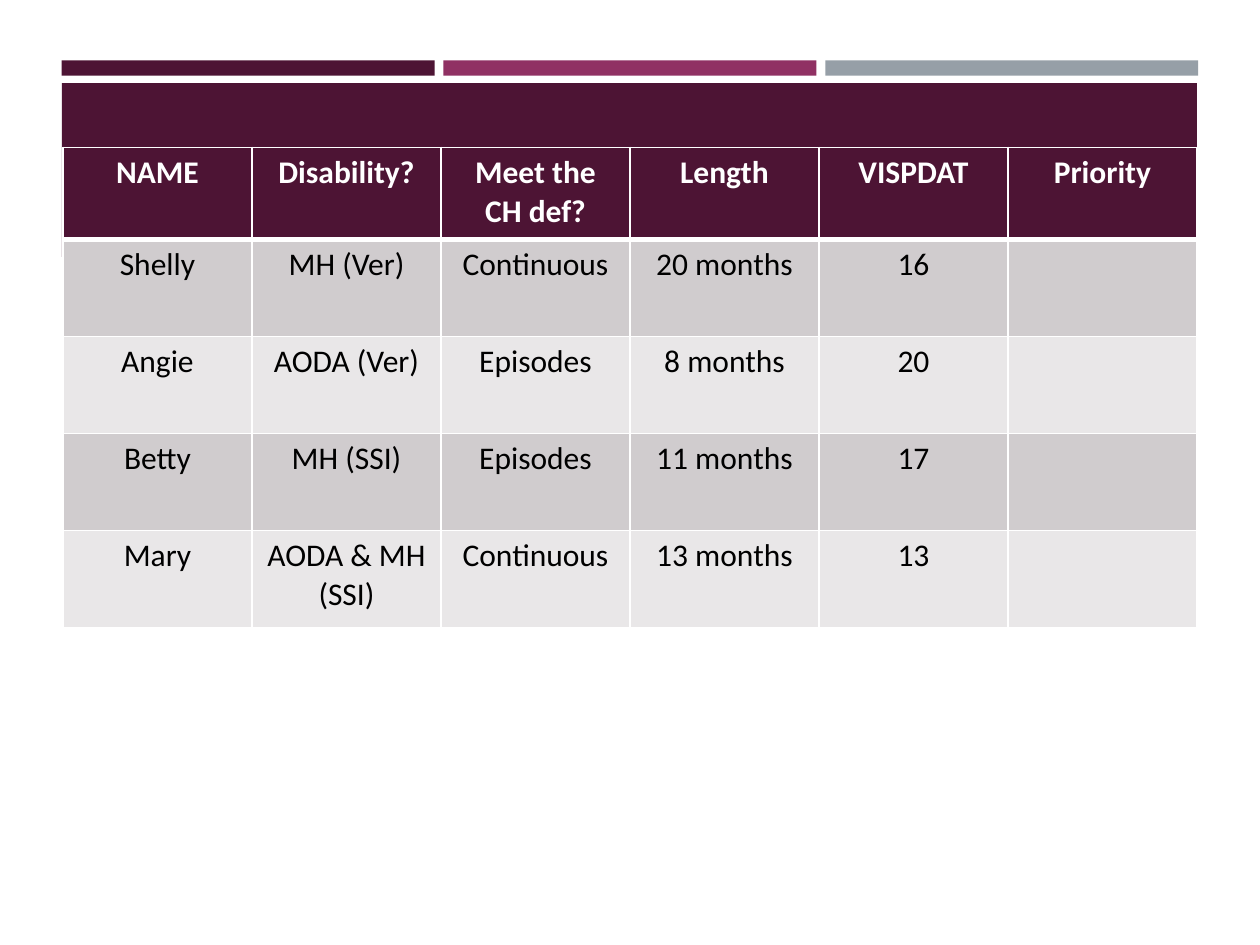
"""Build a slide with a priority table of clients under a banded header."""
from dataclasses import dataclass

from lxml import etree
from pptx import Presentation
from pptx.dml.color import RGBColor
from pptx.enum.shapes import MSO_SHAPE
from pptx.enum.text import PP_ALIGN
from pptx.oxml.ns import qn
from pptx.util import Inches, Pt

RECT = MSO_SHAPE.RECTANGLE
CENTER = PP_ALIGN.CENTER
BLANK_LAYOUT = 6
FONT = "Calibri"
PLUM, MAGENTA, GREY = "4D1434", "903163", "969FA7"
WHITE, BLACK = "FFFFFF", "000000"
ROW_FILLS = ("D0CCCE", "E9E7E8")
HEADER_HEIGHT, ROW_HEIGHT = 0.73, 0.77

ROWS = (
    ("NAME", "Disability?", "Meet the CH def?", "Length", "VISPDAT", "Priority"),
    ("Shelly", "MH (Ver)", "Continuous", "20 months", "16", ""),
    ("Angie", "AODA (Ver)", "Episodes", "8 months", "20", ""),
    ("Betty", "MH (SSI)", "Episodes", "11 months", "17", ""),
    ("Mary", "AODA & MH (SSI)", "Continuous", "13 months", "13", ""),
)


@dataclass(frozen=True)
class Bar:
    left: float
    top: float
    width: float
    height: float
    color: str


@dataclass(frozen=True)
class CellStyle:
    fill: str
    color: str
    bold: bool
    top_line: int
    bottom_line: int


BARS = [Bar(0.49 + i * 3.03, 0.48, 2.96, 0.12, color)
        for i, color in enumerate((PLUM, MAGENTA, GREY))]
BARS.append(Bar(0.49, 0.66, 9.01, 1.38, PLUM))


def rgb(color: str) -> RGBColor:
    return RGBColor.from_string(color)


def draw_bar(slide, bar: Bar) -> None:
    sp = slide.shapes.add_shape(RECT, Inches(bar.left), Inches(bar.top),
                                Inches(bar.width), Inches(bar.height))
    sp.shadow.inherit = False
    sp.fill.solid()
    sp.fill.fore_color.rgb = rgb(bar.color)
    sp.line.fill.background()


def row_style(row: int) -> CellStyle:
    if row == 0:
        return CellStyle(PLUM, WHITE, True, 1, 3)
    return CellStyle(ROW_FILLS[(row - 1) % 2], BLACK, False, 3 if row == 1 else 1, 1)


def add_border(cell, side: str, points: int) -> None:
    tc_pr = cell._tc.get_or_add_tcPr()
    ln = etree.SubElement(tc_pr, qn(f"a:ln{side}"), w=str(Pt(points)))
    fill = etree.SubElement(ln, qn("a:solidFill"))
    etree.SubElement(fill, qn("a:srgbClr"), val=WHITE)


def format_cell(cell, text: str, style: CellStyle) -> None:
    for side, points in (("L", 1), ("R", 1), ("T", style.top_line), ("B", style.bottom_line)):
        add_border(cell, side, points)
    cell.fill.solid()
    cell.fill.fore_color.rgb = rgb(style.fill)
    cell.text_frame.text = text
    p = cell.text_frame.paragraphs[0]
    p.alignment = CENTER
    for r in p.runs:
        r.font.name = FONT
        r.font.size = Pt(18)
        r.font.bold = style.bold
        r.font.color.rgb = rgb(style.color)


def draw_table(slide) -> None:
    height = HEADER_HEIGHT + ROW_HEIGHT * (len(ROWS) - 1)
    table = slide.shapes.add_table(len(ROWS), len(ROWS[0]), Inches(0.5), Inches(1.17),
                                   Inches(9), Inches(height)).table
    for i, texts in enumerate(ROWS):
        table.rows[i].height = Inches(ROW_HEIGHT if i else HEADER_HEIGHT)
        for j, text in enumerate(texts):
            format_cell(table.cell(i, j), text, row_style(i))


def main() -> None:
    prs = Presentation()
    prs.slide_width, prs.slide_height = Inches(10), Inches(7.5)
    s = prs.slides.add_slide(prs.slide_layouts[BLANK_LAYOUT])
    for bar in BARS:
        draw_bar(s, bar)
    draw_table(s)
    prs.save("out.pptx")


if __name__ == "__main__":
    main()
